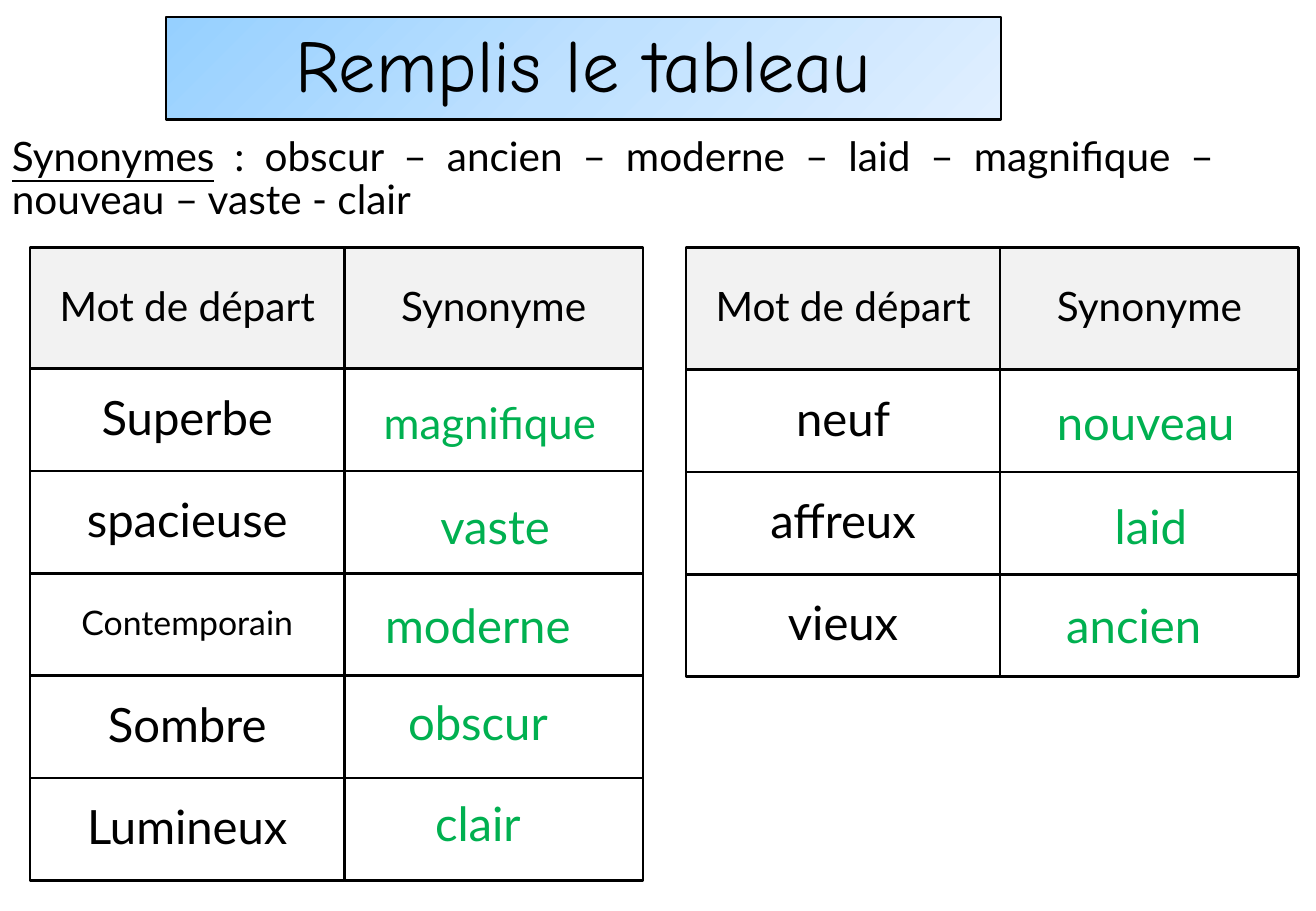
from copy import deepcopy
from dataclasses import dataclass

from pptx import Presentation
from pptx.dml.color import RGBColor
from pptx.enum.shapes import MSO_SHAPE
from pptx.enum.text import MSO_ANCHOR, PP_ALIGN
from pptx.oxml.ns import qn
from pptx.util import Cm, Pt


@dataclass(frozen=True)
class Theme:
    ink: str = "000000"
    answer: str = "00B050"
    header: str = "F2F2F2"
    banner: tuple = (("96D0FF", 0), ("BFE1FF", 0.5), ("E0EFFF", 1))
    title_font: str = "Comic Neue"
    body_font: str = "Lato"
    title_size: float = 44
    text_size: float = 24
    word_size: float = 28
    line: float = 1.5


theme = Theme()


def write(box, text, size, color=theme.ink, font=theme.body_font,
          align=PP_ALIGN.CENTER, anchor=MSO_ANCHOR.MIDDLE, underline=False):
    box.text_frame.word_wrap = True
    box.text_frame.vertical_anchor = anchor
    paragraph = box.text_frame.paragraphs[0]
    layout = {"alignment": align, "line_spacing": 0.9, "space_before": Pt(10)}
    for key, value in layout.items():
        setattr(paragraph, key, value)
    run = paragraph.add_run()
    run.text = text
    style = {"name": font, "size": Pt(size), "underline": underline}
    for key, value in style.items():
        setattr(run.font, key, value)
    run.font.color.rgb = RGBColor.from_string(color)


def add_frame(left, top, width, height):
    frame = slide.shapes.add_shape(
        MSO_SHAPE.RECTANGLE, Cm(left), Cm(top), Cm(width), Cm(height))
    frame.shadow.inherit = False
    frame.fill.background()
    frame.line.color.rgb = RGBColor.from_string(theme.ink)
    frame.line.width = Pt(theme.line)
    return frame


prs = Presentation()
prs.slide_width, prs.slide_height = Cm(27.51), Cm(19.05)
slide = prs.slides.add_slide(prs.slide_layouts[6])

# Title banner with a three-step gradient
banner = add_frame(3.47, 0.36, 17.46, 2.14)
banner.fill.gradient()
banner.fill.gradient_angle = 315
stop_list = banner._element.spPr.find(qn("a:gradFill")).find(qn("a:gsLst"))
stop_list.insert(1, deepcopy(stop_list[0]))
for stop, (color, position) in zip(banner.fill.gradient_stops, theme.banner):
    stop.color.rgb = RGBColor.from_string(color)
    stop.position = position
write(banner, "Remplis le tableau", theme.title_size, font=theme.title_font)

# Word bank
word_bank = slide.shapes.add_textbox(0, Cm(2.72), Cm(25.63), Cm(2.24))
bank_format = {"align": PP_ALIGN.JUSTIFY, "anchor": MSO_ANCHOR.TOP}
write(word_bank, "Synonymes", theme.text_size, underline=True, **bank_format)
write(word_bank,
      " : obscur – ancien – moderne – laid – magnifique – nouveau – vaste - clair",
      theme.text_size, **bank_format)

# Synonym grids: left edge, top of the first word row, word pairs
headings = ("Mot de départ", "Synonyme")
grids = [
    (0.63, 7.71, [("Superbe", "magnifique"), ("spacieuse", "vaste"),
                  ("Contemporain", "moderne"), ("Sombre", "obscur"),
                  ("Lumineux", "clair")]),
    (14.34, 7.73, [("neuf", "nouveau"), ("affreux", "laid"),
                   ("vieux", "ancien")]),
]
special_sizes = {"Contemporain": 20, "magnifique": 25.9}
word_width, synonym_width = 6.57, 6.24
header_top, header_height, row_height = 5.18, 2.54, 2.14
# Each row's answer: offset from the grid's left edge, and top
answer_places = [(6.6, 8.13), (6.71, 10.31), (6.35, 12.37),
                 (6.35, 14.4), (6.35, 16.51)]

for left, rows_top, pairs in grids:
    columns = ((left, word_width), (left + word_width, synonym_width))

    # Header cells
    for heading, (x, width) in zip(headings, columns):
        header = add_frame(x, header_top, width, header_height)
        header.fill.solid()
        header.fill.fore_color.rgb = RGBColor.from_string(theme.header)
        write(header, heading, theme.text_size)

    # Word cells and empty synonym cells
    for row, (word, _) in enumerate(pairs):
        word_cell, _ = [add_frame(x, rows_top + row * row_height, width, row_height)
                        for x, width in columns]
        write(word_cell, word, special_sizes.get(word, theme.word_size))

    # Answers laid over the synonym cells
    for (_, synonym), (offset, top) in zip(pairs, answer_places):
        answer = slide.shapes.add_textbox(
            Cm(left + offset), Cm(top), Cm(6.02), Cm(1.52))
        write(answer, synonym, special_sizes.get(synonym, theme.word_size),
              theme.answer)

prs.save("out.pptx")
